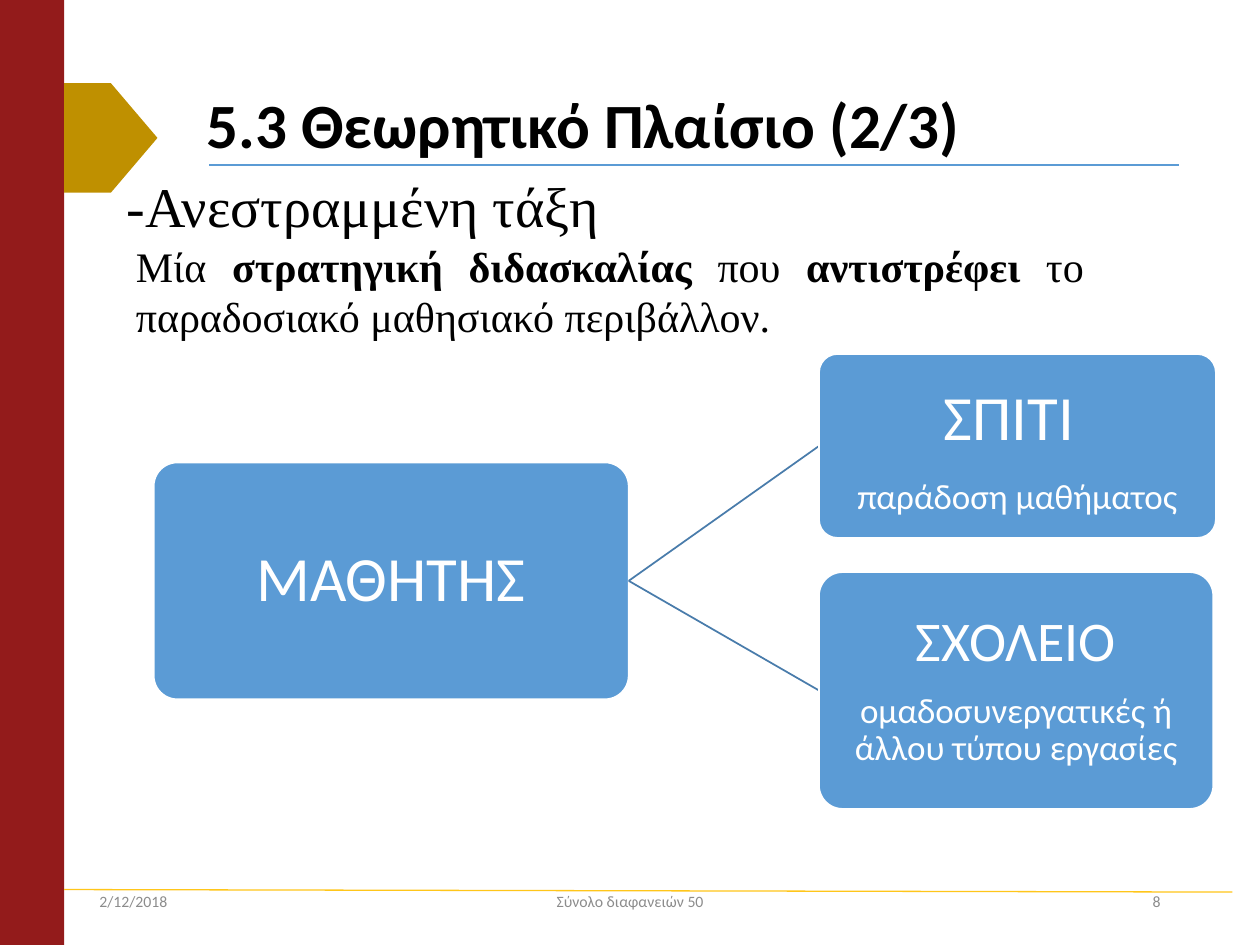
from dataclasses import dataclass

from lxml import etree
from pptx import Presentation
from pptx.dml.color import RGBColor
from pptx.enum import shapes, text
from pptx.oxml.ns import qn
from pptx.util import Inches, Pt

ALIGN = text.PP_ALIGN
SHAPE = shapes.MSO_SHAPE


@dataclass(frozen=True)
class Theme:
    sans: str = "Calibri"
    serif: str = "Times New Roman"
    black: str = "000000"
    white: str = "FFFFFF"
    grey: str = "8C8C8C"
    red: str = "931B1B"
    gold: str = "BF9000"
    yellow: str = "FFC61A"
    blue: str = "5B9BD5"
    branch: str = "497CAB"
    title: int = 36
    subtitle: int = 32
    body: int = 24
    detail: int = 20
    footer: int = 9


class SlideBuilder:
    def __init__(self, slide, theme):
        self.slide = slide
        self.theme = theme

    def style(self, p, size, color, font, bold=False):
        for r in p.runs:
            r.font.size = Pt(size)
            r.font.name = font
            r.font.bold = bold
            r.font.color.rgb = RGBColor.from_string(color)

    def block(self, kind, box, fill, outline=None):
        sp = self.slide.shapes.add_shape(kind, *map(Inches, box))
        sp.shadow.inherit = False
        sp.fill.solid()
        sp.fill.fore_color.rgb = RGBColor.from_string(fill)
        if outline:
            sp.line.color.rgb = RGBColor.from_string(outline)
            sp.line.width = Pt(1)
        else:
            sp.line.fill.background()
        return sp

    def line(self, start, end, color, width=0.75):
        ends = map(Inches, (*start, *end))
        cxn = self.slide.shapes.add_connector(shapes.MSO_CONNECTOR.STRAIGHT, *ends)
        cxn.line.color.rgb = RGBColor.from_string(color)
        cxn.line.width = Pt(width)
        etree.SubElement(cxn._element.spPr, qn("a:effectLst"))

    def text(self, box, content, size, color, font, align=ALIGN.LEFT,
             bold=False, middle=False):
        tf = self.slide.shapes.add_textbox(*map(Inches, box)).text_frame
        tf.word_wrap = True
        if middle:
            tf.vertical_anchor = text.MSO_ANCHOR.MIDDLE
        p = tf.paragraphs[0]
        p.text = content
        p.alignment = align
        self.style(p, size, color, font, bold)
        return p

    def node(self, box, lines):
        """Rounded diagram box; lines holds (text, size) pairs."""
        t = self.theme
        sp = self.block(SHAPE.ROUNDED_RECTANGLE, box, t.blue, t.white)
        sp.adjustments[0] = 0.1
        tf = sp.text_frame
        tf.word_wrap = True
        tf.vertical_anchor = text.MSO_ANCHOR.MIDDLE
        tf.margin_left = tf.margin_right = Inches(0.03)
        tf.margin_top = tf.margin_bottom = Inches(0.03)
        tf.text = "\n".join(content for content, _ in lines)
        for p, (_, size) in zip(tf.paragraphs, lines):
            p.alignment = ALIGN.CENTER
            p.line_spacing = 0.9
            p.space_after = Pt(round(size * 0.35, 1))
            self.style(p, size, t.white, t.sans)
        return tf


def main():
    prs = Presentation()
    prs.slide_width, prs.slide_height = Inches(10), Inches(7.5)
    t = Theme()
    s = SlideBuilder(prs.slides.add_slide(prs.slide_layouts[6]), t)

    # Frame
    s.block(SHAPE.RECTANGLE, (0, 0, 0.51, 7.5), t.red)
    s.line((1.66, 1.31), (9.36, 1.31), t.blue)
    s.line((0.51, 7.06), (9.78, 7.08), t.yellow)
    s.block(SHAPE.PENTAGON, (0.51, 0.66, 0.74, 0.87), t.gold)

    # Headings
    title = s.text((1.54, 0.6, 7.87, 0.84), "5.3 Θεωρητικό Πλαίσιο (2/3)",
                   t.title, t.black, t.sans, bold=True, middle=True)
    title.line_spacing = 0.9
    s.text((0.91, 1.31, 8.5, 0.64), "-Ανεστραμμένη τάξη",
           t.subtitle, t.black, t.serif)

    # Footer
    for left, width, content, align in (
        (0.69, 2.25, "2/12/2018", ALIGN.LEFT),
        (3.31, 3.38, "Σύνολο διαφανειών 50", ALIGN.CENTER),
        (7.06, 2.25, "8", ALIGN.RIGHT),
    ):
        s.text((left, 6.95, width, 0.4), content, t.footer, t.grey, t.sans,
               align, middle=True)

    # Definition, with every second part in bold
    definition = s.text((0.98, 1.86, 7.72, 0.91), "", t.body, t.black, t.serif,
                        ALIGN.JUSTIFY)
    parts = ("Μία ", "στρατηγική διδασκαλίας ", "που ", "αντιστρέφει",
             " το παραδοσιακό μαθησιακό περιβάλλον. ")
    for part in parts:
        definition.add_run().text = part
    s.style(definition, t.body, t.black, t.serif)
    for r in definition.runs[1::2]:
        r.font.bold = True

    # Diagram
    student_right = (4.99, 4.61)
    s.node((1.22, 3.67, 3.77, 1.88), [("ΜΑΘΗΤΗΣ", t.title)])
    for top, width, height, lines in (
        (2.81, 3.15, 1.46, [("ΣΠΙΤΙ", t.title), ("παράδοση μαθήματος", t.detail)]),
        (4.54, 3.13, 1.88, [("ΣΧΟΛΕΙΟ", t.subtitle),
                            ("ομαδοσυνεργατικές ή άλλου τύπου εργασίες", t.detail)]),
    ):
        s.line(student_right, (6.5, top + height / 2), t.branch, 1)
        tf = s.node((6.5, top, width, height), lines)
        if lines[0][0] == "ΣΠΙΤΙ":
            r = tf.paragraphs[0].add_run()
            r.text = " "
            r.font.size = Pt(44)

    prs.save("out.pptx")


if __name__ == "__main__":
    main()
